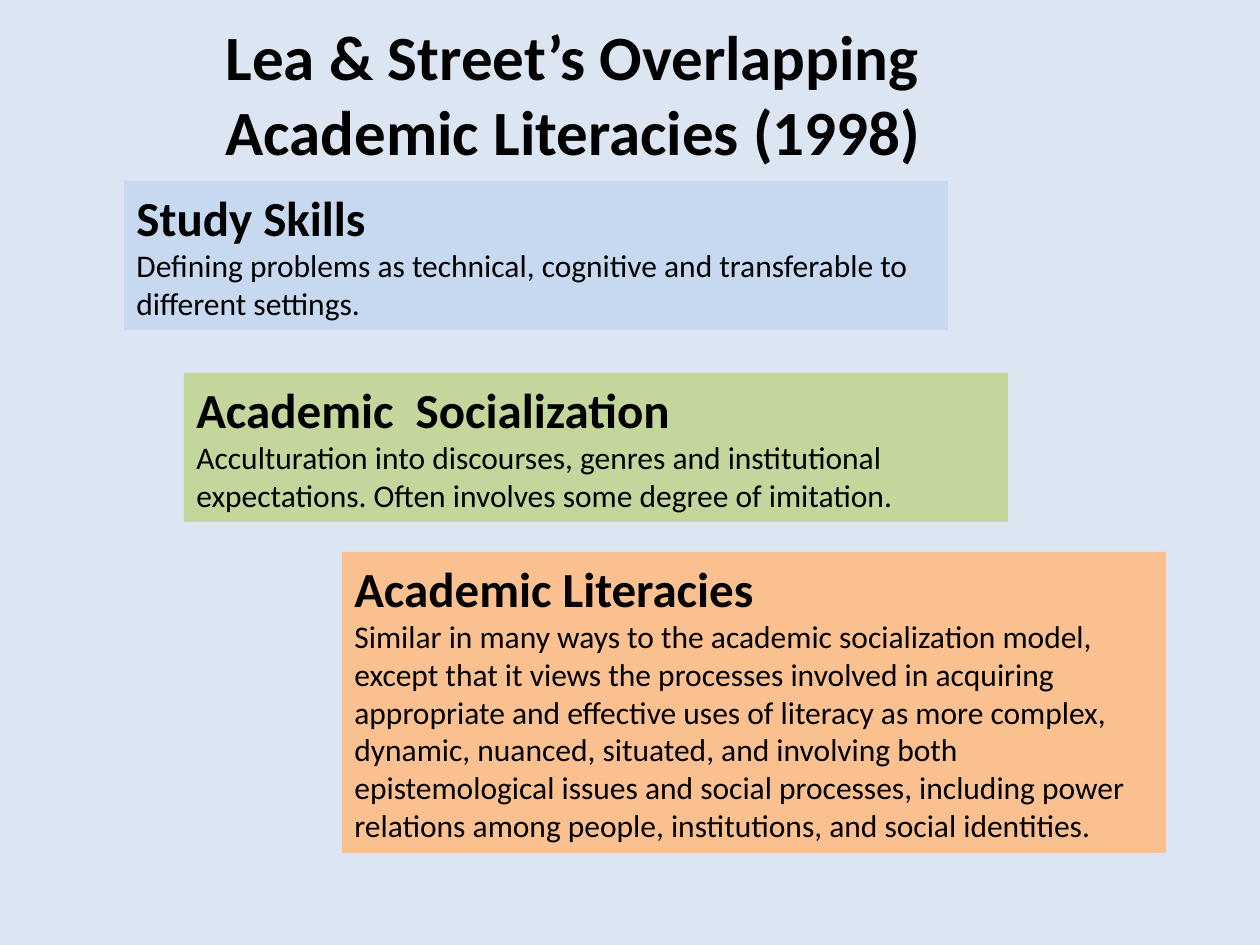
from pptx import Presentation
from pptx.dml.color import RGBColor
from pptx.enum.text import MSO_ANCHOR as Anchor, MSO_AUTO_SIZE as AutoSize, PP_ALIGN as Align
from pptx.util import Inches, Pt

PX_PER_INCH = 126
TITLE_ONLY_LAYOUT = 5
COLORS = {
    "background": "DCE6F2",
    "text": "000000",
    "study": "C6D9F1",
    "socialization": "C3D69B",
    "literacies": "FAC090",
}
HEADING = {"name": "Calibri", "size": Pt(28), "bold": True}
DESCRIPTION = {"name": "Calibri", "size": Pt(18), "bold": False}
TITLE = {"name": "Calibri", "size": Pt(36), "bold": True}

MODEL_WIDTH = 824
MODELS = [
    # left, top, height, colour, heading, description
    (124, 181, 149, "study", "Study Skills",
     "Defining problems as technical, cognitive and transferable to different settings."),
    (184, 373, 149, "socialization", "Academic  Socialization",
     "Acculturation into discourses, genres and institutional expectations. "
     "Often involves some degree of imitation."),
    (342, 552, 301, "literacies", "Academic Literacies",
     "Similar in many ways to the academic socialization model, except that it views "
     "the processes involved in acquiring appropriate and effective uses of literacy as "
     "more complex, dynamic, nuanced, situated, and involving both epistemological issues "
     "and social processes, including power relations among people, institutions, and "
     "social identities."),
]


def px(length):
    return Inches(length / PX_PER_INCH)


def color(name):
    return RGBColor.from_string(COLORS[name])


def fill_solid(fill, name):
    fill.solid()
    fill.fore_color.rgb = color(name)


def write_paragraphs(text_frame, lines):
    """Write (text, font values) pairs, one left-aligned paragraph each."""
    for index, (text, values) in enumerate(lines):
        paragraph = text_frame.paragraphs[0] if index == 0 else text_frame.add_paragraph()
        paragraph.alignment = Align.LEFT
        run = paragraph.add_run()
        run.text = text
        run.font.color.rgb = color("text")
        for attribute, value in values.items():
            setattr(run.font, attribute, value)


def format_text_frame(text_frame, wrap):
    values = {
        "word_wrap": wrap,
        "auto_size": AutoSize.SHAPE_TO_FIT_TEXT,
        "vertical_anchor": Anchor.TOP,
    }
    for attribute, value in values.items():
        setattr(text_frame, attribute, value)


def add_title(slide, left, top, width, height, lines):
    title = slide.shapes.title
    title.left, title.top, title.width, title.height = map(px, (left, top, width, height))
    format_text_frame(title.text_frame, wrap=False)
    write_paragraphs(title.text_frame, [(line, TITLE) for line in lines])


def add_model(slide, left, top, height, fill, heading, description):
    box = slide.shapes.add_textbox(*map(px, (left, top, MODEL_WIDTH, height)))
    fill_solid(box.fill, fill)
    format_text_frame(box.text_frame, wrap=True)
    write_paragraphs(box.text_frame, [(heading, HEADING), (description, DESCRIPTION)])


def main():
    presentation = Presentation()
    presentation.slide_width, presentation.slide_height = px(1260), px(945)
    slide = presentation.slides.add_slide(presentation.slide_layouts[TITLE_ONLY_LAYOUT])
    fill_solid(slide.background.fill, "background")
    add_title(slide, 213, 11, 741, 165,
              ["Lea & Street’s Overlapping", "Academic Literacies (1998)"])
    for model in MODELS:
        add_model(slide, *model)
    presentation.save("out.pptx")


if __name__ == "__main__":
    main()
